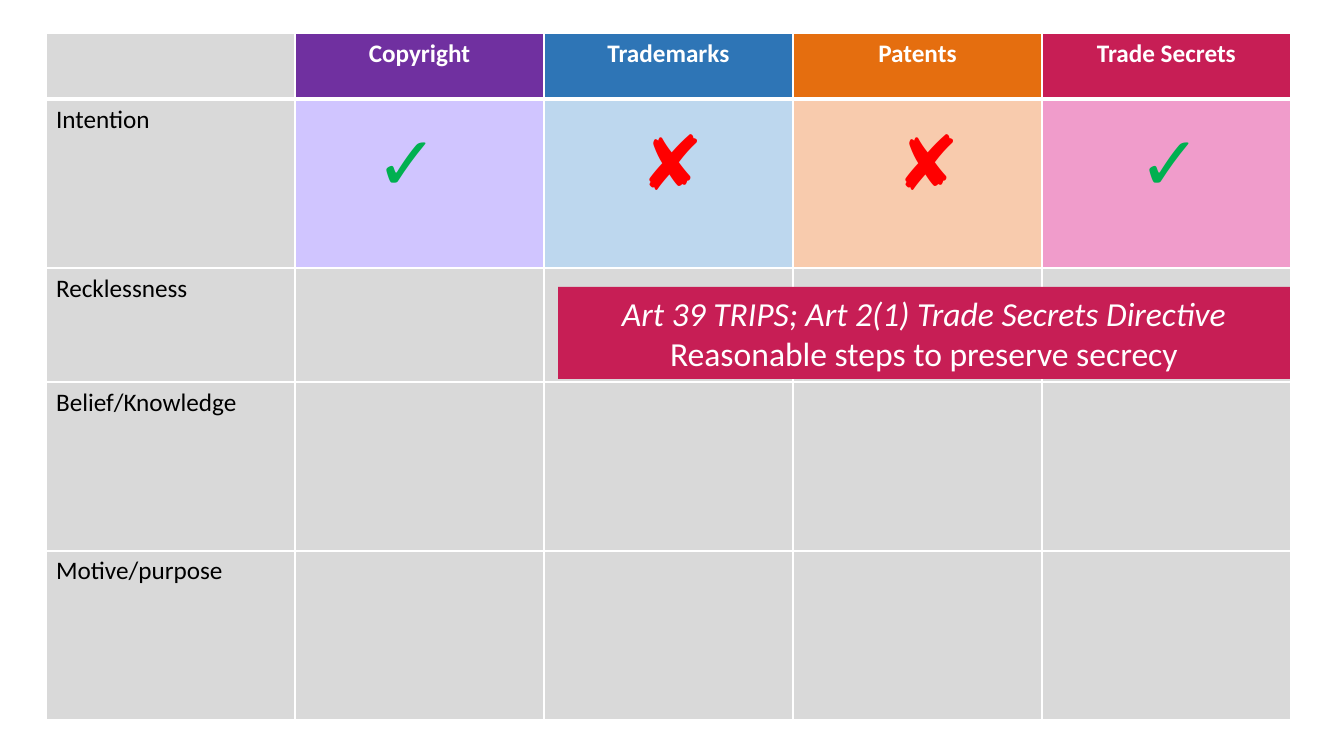
from lxml import etree
from pptx import Presentation
from pptx import util as u
from pptx.dml.color import RGBColor
from pptx.enum import shapes, text
from pptx.oxml import ns

EMU_PER_PX = 914400 / 100.8
FONT = "Calibri"
WHITE, BLACK, GREY, CRIMSON = "FFFFFF", "000000", "D9D9D9", "C71E55"
GREEN, RED = "00B050", "FF0000"

# Heading, heading fill, fill of the Intention cell
RIGHTS = [
    ("Copyright", "7030A0", "D0C5FF"),
    ("Trademarks", "2E75B6", "BDD7EE"),
    ("Patents", "E56E0F", "F8CBAD"),
    ("Trade Secrets", CRIMSON, "F09CCB"),
]
MENTAL_STATES = ["Intention", "Recklessness", "Belief/Knowledge", "Motive/purpose"]
COLUMN_WIDTH = 249
ROW_HEIGHTS = [66, 169, 114, 169, 169]

# Symbol, colour, left edge, width
MARKS = [
    ("✓", GREEN, 366, 78),
    ("✘", RED, 622, 100),
    ("✘", RED, 878, 100),
    ("✓", GREEN, 1129, 78),
]


def px(length):
    return u.Emu(round(length * EMU_PER_PX))


def color(code):
    return RGBColor.from_string(code)


def write(para, words, size, code, bold=False, italic=False, centred=True):
    para.text = words
    para.alignment = text.PP_ALIGN.CENTER if centred else text.PP_ALIGN.LEFT
    font = para.font
    font.name, font.size = FONT, u.Pt(size)
    font.bold, font.italic = bold, italic
    font.color.rgb = color(code)


def set_borders(cell, top, bottom):
    """Draw white cell borders; top and bottom are widths in points."""
    properties = cell._tc.get_or_add_tcPr()
    for side, width in (("L", 1), ("R", 1), ("T", top), ("B", bottom)):
        line = etree.SubElement(properties, ns.qn(f"a:ln{side}"), w=str(u.Pt(width)))
        fill = etree.SubElement(line, ns.qn("a:solidFill"))
        etree.SubElement(fill, ns.qn("a:srgbClr"), val=WHITE)


def cell_fill(row, column):
    if column == 0 or row > 1:
        return GREY
    return RIGHTS[column - 1][row + 1]


def add_rights_table(page):
    rows, columns = len(ROW_HEIGHTS), len(RIGHTS) + 1
    table = page.shapes.add_table(
        rows, columns, px(46), px(33),
        px(columns * COLUMN_WIDTH), px(sum(ROW_HEIGHTS))).table
    table.horz_banding = False
    for column in table.columns:
        column.width = px(COLUMN_WIDTH)
    for row, height in zip(table.rows, ROW_HEIGHTS):
        row.height = px(height)

    # Borders and fills
    for row in range(rows):
        for column in range(columns):
            cell = table.cell(row, column)
            set_borders(cell, top=3 if row == 1 else 1, bottom=3 if row == 0 else 1)
            cell.fill.solid()
            cell.fill.fore_color.rgb = color(cell_fill(row, column))

    # Column and row headings
    for column, (heading, _, _) in enumerate(RIGHTS, 1):
        para = table.cell(0, column).text_frame.paragraphs[0]
        write(para, heading, 18, WHITE, bold=True)
    for row, state in enumerate(MENTAL_STATES, 1):
        para = table.cell(row, 0).text_frame.paragraphs[0]
        write(para, state, 18, BLACK, centred=False)


def add_mark(page, symbol, code, left, width):
    box = page.shapes.add_textbox(px(left), px(110), px(width), px(102))
    frame = box.text_frame
    frame.word_wrap = False
    frame.auto_size = text.MSO_AUTO_SIZE.SHAPE_TO_FIT_TEXT
    write(frame.paragraphs[0], symbol, 54, code, bold=True)


def add_secrecy_banner(page):
    banner = page.shapes.add_shape(
        shapes.MSO_SHAPE.RECTANGLE, px(558), px(287), px(732), px(92))
    banner.shadow.inherit = False
    banner.fill.solid()
    banner.fill.fore_color.rgb = color(CRIMSON)
    banner.line.fill.background()
    frame = banner.text_frame
    frame.word_wrap = True
    frame.auto_size = text.MSO_AUTO_SIZE.SHAPE_TO_FIT_TEXT
    write(frame.paragraphs[0], "Art 39 TRIPS; Art 2(1) Trade Secrets Directive",
          24, WHITE, italic=True)
    write(frame.add_paragraph(), "Reasonable steps to preserve secrecy", 24, WHITE)


def main():
    deck = Presentation()
    deck.slide_width, deck.slide_height = px(1344), px(756)
    page = deck.slides.add_slide(deck.slide_layouts.get_by_name("Blank"))
    add_rights_table(page)
    for mark in MARKS:
        add_mark(page, *mark)
    add_secrecy_banner(page)
    deck.save("out.pptx")


if __name__ == "__main__":
    main()
